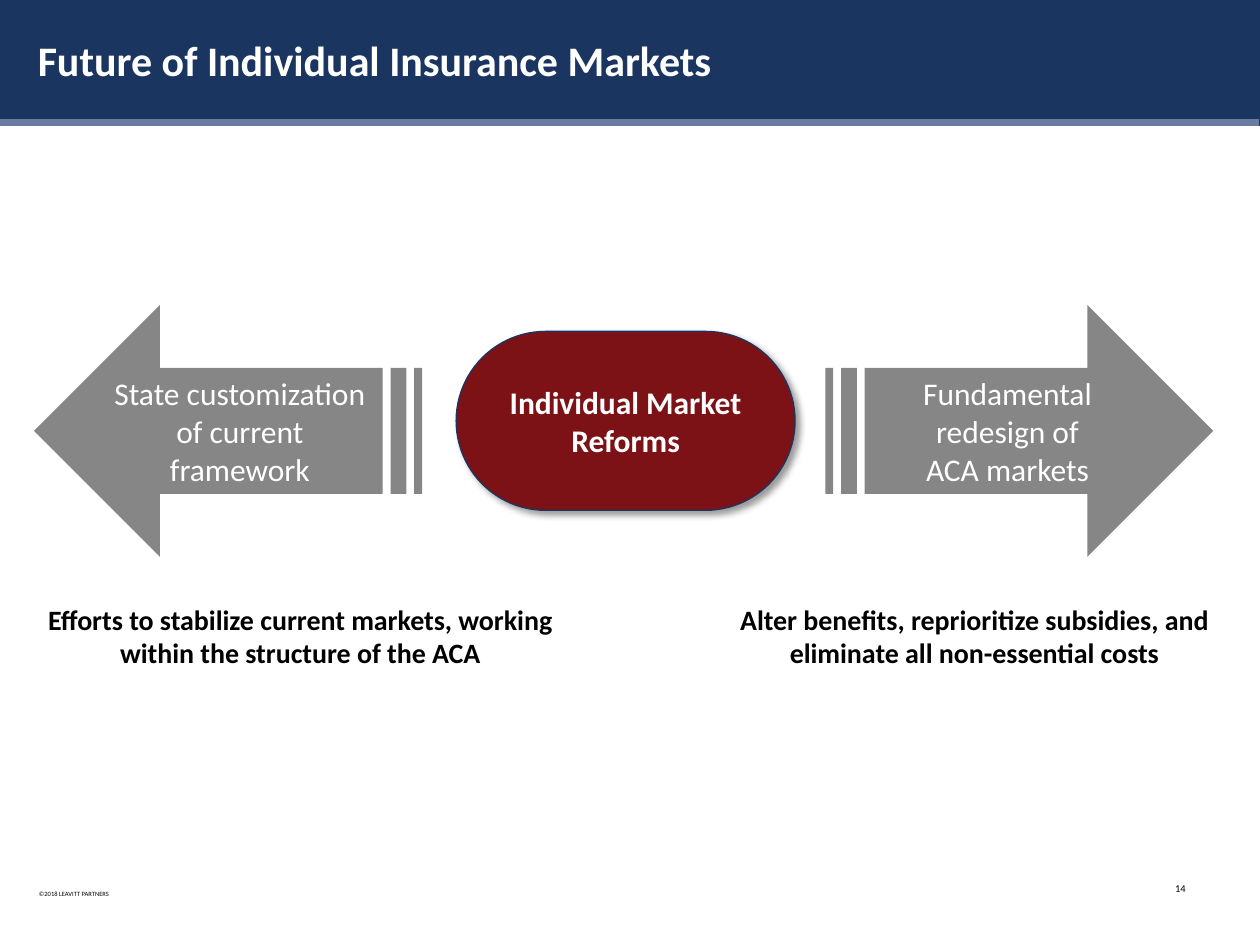
from dataclasses import dataclass

from lxml.etree import SubElement
from pptx import Presentation
from pptx.dml.color import RGBColor as RGB
from pptx.enum.shapes import MSO_CONNECTOR as CONN, MSO_SHAPE as SHAPE
from pptx.enum.text import MSO_ANCHOR as ANCHOR, PP_ALIGN as ALIGN
from pptx.oxml.ns import qn
from pptx.util import Inches, Pt

COLS, ROWS = 40, 30
UNIT = Inches(10) / COLS


@dataclass(frozen=True)
class Theme:
    """Colours, font and type sizes of the slide."""
    navy: RGB = RGB(0x19, 0x35, 0x60)
    rule: RGB = RGB(0x68, 0x7D, 0xA1)
    red: RGB = RGB(0x7C, 0x12, 0x15)
    grey: RGB = RGB(0x86, 0x86, 0x86)
    white: RGB = RGB(0xFF, 0xFF, 0xFF)
    black: RGB = RGB(0, 0, 0)
    font: str = "Calibri"
    title: float = 24
    label: float = 18
    caption: float = 16
    number: float = 6
    copyright: float = 3.7


T = Theme()


def grid(*cells):
    """Turn grid columns and rows into slide lengths."""
    return [round(c * UNIT) for c in cells]


def write(sp, text, size, color, bold=False, align=ALIGN.CENTER,
          anchor=ANCHOR.TOP, inset=(0.1, 0.05), wrap=True):
    """Fill a shape with text in one style."""
    tf = sp.text_frame
    tf.text = text
    tf.word_wrap = wrap
    tf.vertical_anchor = anchor
    tf.margin_left = tf.margin_right = Inches(inset[0])
    tf.margin_top = tf.margin_bottom = Inches(inset[1])
    for p in tf.paragraphs:
        p.alignment = align
        for r in p.runs:
            r.font.name, r.font.size, r.font.bold = T.font, Pt(size), bold
            r.font.color.rgb = color
    return tf


def add_block(s, kind, box, fill):
    """Add a flat filled shape without outline."""
    sp = s.shapes.add_shape(kind, *grid(*box))
    sp.shadow.inherit = False
    sp.fill.solid()
    sp.fill.fore_color.rgb = fill
    sp.line.fill.background()
    return sp


def add_shadow(sp):
    """Give a shape a soft shadow to the lower right."""
    effects = sp._element.spPr.find(qn("a:effectLst"))
    shadow = SubElement(effects, qn("a:outerShdw"), blurRad=str(Pt(4)),
                        dist=str(Pt(3)), dir="2700000", algn="tl",
                        rotWithShape="0")
    color = SubElement(shadow, qn("a:srgbClr"), val=str(T.black))
    SubElement(color, qn("a:alpha"), val="40000")


def add_header(s, box, text):
    """Draw the title band with its rule and title."""
    x, y, w, h = box
    add_block(s, SHAPE.RECTANGLE, box, T.navy)
    x1, x2, level = grid(x - 0.04, x + w - 0.04, y + h - 0.12)
    rule = s.shapes.add_connector(CONN.STRAIGHT, x1, level, x2, level)
    rule.line.color.rgb, rule.line.width = T.rule, Pt(4)
    SubElement(rule._element.spPr, qn("a:effectLst"))
    title = s.shapes.add_textbox(*grid(x + 0.92, y + h / 4, w - 2.12, h / 2))
    tf = write(title, text, T.title, T.white, True, ALIGN.LEFT,
               ANCHOR.MIDDLE, (0.07, 0.04))
    tf.paragraphs[0].line_spacing = 0.9


def add_arrow(s, box, text, to_left=False):
    """Draw a striped arrow that points right or left."""
    sp = add_block(s, SHAPE.STRIPED_RIGHT_ARROW, box, T.grey)
    if to_left:
        sp._element.spPr.find(qn("a:xfrm")).set("flipH", "1")
    write(sp, text, T.label, T.white, anchor=ANCHOR.MIDDLE)


def add_pill(s, box, text):
    """Draw the central topic pill."""
    sp = add_block(s, SHAPE.ROUNDED_RECTANGLE, box, T.red)
    sp.adjustments[0] = 0.5
    sp.line.color.rgb, sp.line.width = T.navy, Pt(0.75)
    add_shadow(sp)
    write(sp, text, T.label, T.white, True, anchor=ANCHOR.MIDDLE,
          inset=(0.2, 0.2))


def add_spectrum(s, box, left, topic, right):
    """Place two opposed arrows around the topic."""
    x, y, w, h = box
    arrow = 12.32
    add_pill(s, (x + 13.4, y + 0.84, 10.76, 5.68), topic)
    add_arrow(s, (x + w - arrow, y, arrow, h), right)
    add_arrow(s, (x, y, arrow, h), left, to_left=True)


def add_caption(s, box, text):
    """Write a bold caption below an arrow."""
    sp = s.shapes.add_textbox(*grid(*box))
    write(sp, text, T.caption, T.black, True)


def add_footer(s, box, notice, number):
    """Write the copyright line and the slide number."""
    x, y, w, h = box
    inset = (0.06, 0.03)
    sp = s.shapes.add_textbox(*grid(x, y + 0.24, 2.8, 0.48))
    write(sp, notice, T.copyright, T.black, align=ALIGN.LEFT,
          inset=inset, wrap=False)
    sp = s.shapes.add_textbox(*grid(x + w - 1.24, y, 1.24, h))
    write(sp, number, T.number, T.black, align=ALIGN.RIGHT, inset=inset)


def main():
    """Build and save the slide."""
    prs = Presentation()
    prs.slide_width, prs.slide_height = grid(COLS, ROWS)
    s = prs.slides.add_slide(prs.slide_layouts[6])
    add_header(s, (0, 0, COLS, 4), "Future of Individual Insurance Markets")
    add_spectrum(s, (1.08, 9.68, 37.44, 8),
                 "State customization of current framework",
                 "Individual Market Reforms",
                 "Fundamental redesign of\nACA markets")
    add_caption(s, (0.72, 18.92, 17.64, 2.56),
                "Efforts to stabilize current markets, working within "
                "the structure of the ACA")
    add_caption(s, (21.64, 18.92, 18.6, 2.56),
                "Alter benefits, reprioritize subsidies, and eliminate "
                "all non-essential costs")
    add_footer(s, (1, 27.88, 36.88, 0.64), "©2018 LEAVITT PARTNERS", "14")
    prs.save("out.pptx")


if __name__ == "__main__":
    main()
